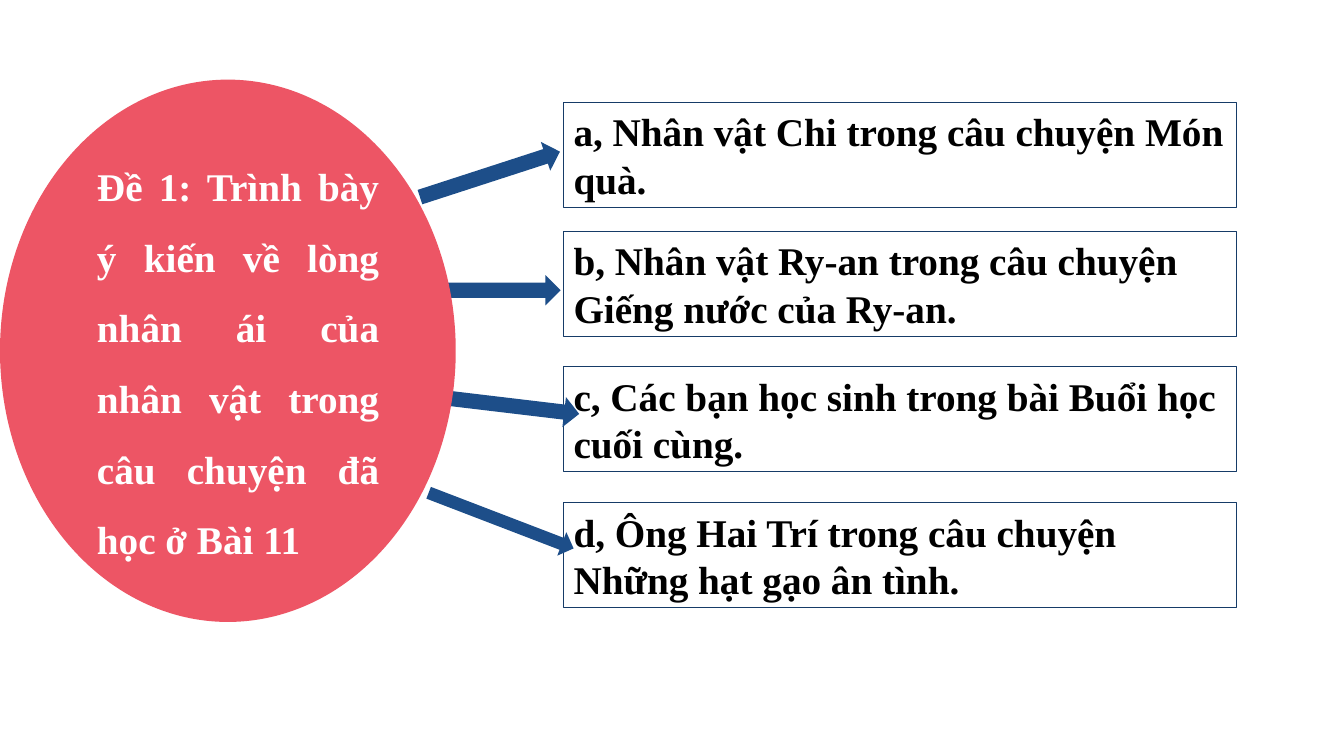
import pptx
import pptx.dml.color
import pptx.enum.shapes
import pptx.enum.text
import pptx.util

PX = 9144
RED = pptx.dml.color.RGBColor(0xED, 0x55, 0x65)
BLUE = pptx.dml.color.RGBColor(0x1D, 0x4E, 0x89)
NAVY = pptx.dml.color.RGBColor(0x16, 0x3B, 0x67)
BLACK = pptx.dml.color.RGBColor(0, 0, 0)
WHITE = pptx.dml.color.RGBColor(255, 255, 255)
KIND = pptx.enum.shapes.MSO_SHAPE
ALIGN = pptx.enum.text.PP_ALIGN
ANCHOR = pptx.enum.text.MSO_ANCHOR

TOPIC = "Đề 1: Trình bày ý kiến về lòng nhân ái của nhân vật trong câu chuyện đã học ở Bài 11"
# Each row: top of the card, text, then the arrow's box and turn.
ROWS = [
    (0, "a, Nhân vật Chi trong câu chuyện Món quà.", (-146, 56, 146, 30), 342),
    (128, "b, Nhân vật Ry-an trong câu chuyện Giếng nước của Ry-an.", (-149, 43, 146, 30), 0),
    (262, "c, Các bạn học sinh trong bài Buổi học cuối cùng.", (-130, 23, 146, 30), 6.8),
    (397, "d, Ông Hai Trí trong câu chuyện Những hạt gạo ân tình.", (-139, 5, 154, 25), 21),
]


def add(slide, kind, box, fill=None):
    """Add a flat shape, filled or clear, without an outline."""
    shape = slide.shapes.add_shape(kind, *(n * PX for n in box))
    shape.shadow.inherit = False
    shape.line.fill.background()
    if fill is None:
        shape.fill.background()
    else:
        shape.fill.solid()
        shape.fill.fore_color.rgb = fill
    return shape


def write(shape, text, color, align, anchor):
    """Set the bold text of a shape and return its paragraph."""
    frame = shape.text_frame
    frame.text = text
    frame.word_wrap = True
    frame.vertical_anchor = anchor
    para = frame.paragraphs[0]
    para.alignment = align
    font = para.runs[0].font
    font.name = "Times New Roman"
    font.size = pptx.util.Pt(28)
    font.bold = True
    font.color.rgb = color
    return para


def draw_cards(slide, left, top, width, height):
    """Draw the outlined cards and the arrow that leads to each."""
    for drop, text, (dx, dy, wide, high), turn in ROWS:
        card = add(slide, KIND.RECTANGLE, (left, top + drop, width, height))
        card.line.color.rgb = NAVY
        card.line.width = pptx.util.Pt(0.75)
        write(card, text, BLACK, ALIGN.LEFT, ANCHOR.TOP)
        place = (left + dx, top + drop + dy, wide, high)
        arrow = add(slide, KIND.RIGHT_ARROW, place, BLUE)
        arrow.rotation = turn


def draw_topic(slide, *box):
    """Draw the ellipse that holds the topic."""
    oval = add(slide, KIND.OVAL, box, RED)
    para = write(oval, TOPIC, WHITE, ALIGN.JUSTIFY, ANCHOR.MIDDLE)
    para.line_spacing = 1.5
    oval.text_frame.margin_left = 30 * PX


def main():
    """Build the slide and save it."""
    deck = pptx.Presentation()
    deck.slide_width = 1333 * PX
    deck.slide_height = 750 * PX
    slide = deck.slides.add_slide(deck.slide_layouts[6])
    draw_cards(slide, 559, 102, 667, 104)
    draw_topic(slide, 0, 79, 452, 538)
    deck.save("out.pptx")


if __name__ == "__main__":
    main()
